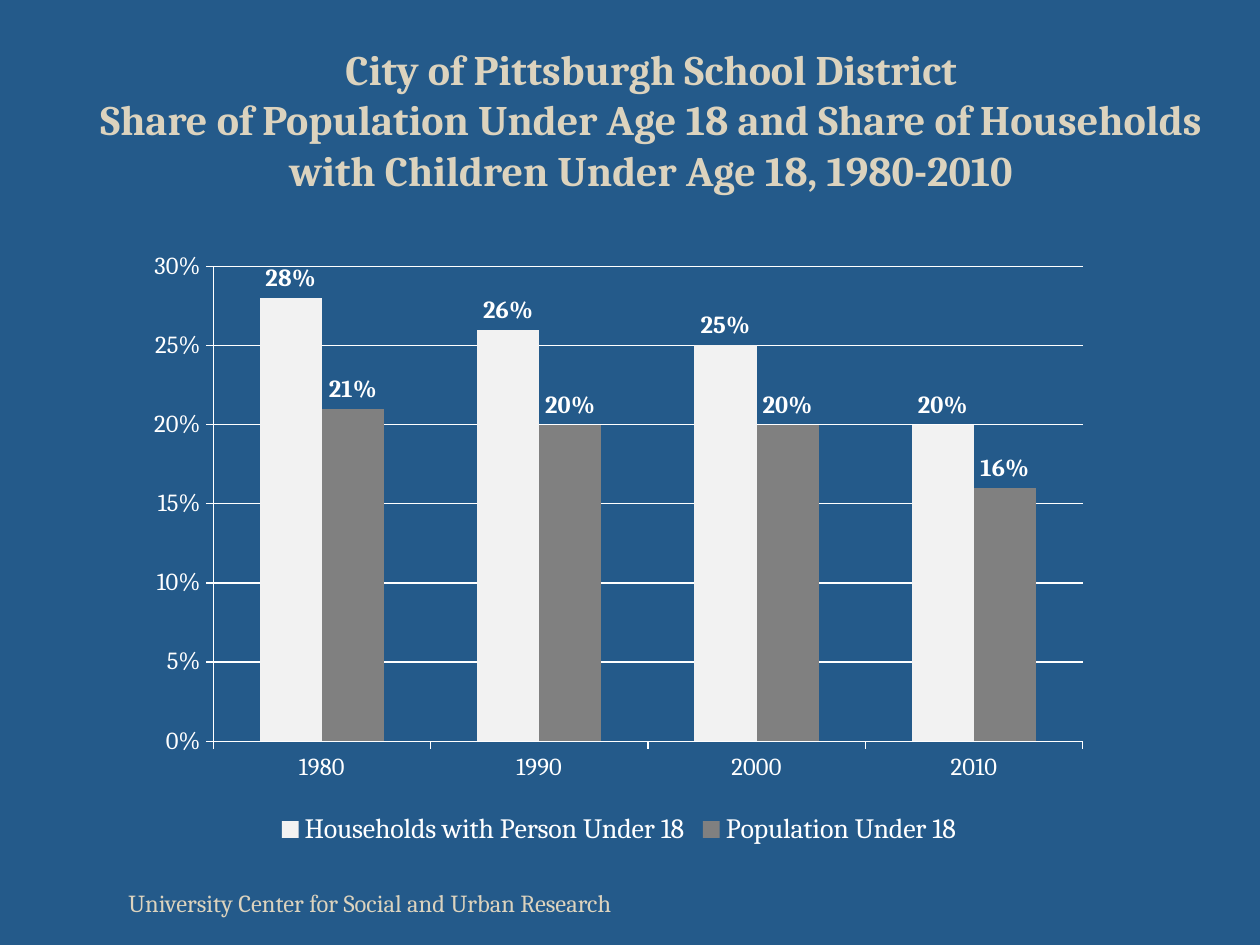
from lxml import etree
from pptx import Presentation
from pptx.chart.data import CategoryChartData
from pptx.dml.color import RGBColor
from pptx.enum.chart import XL_CHART_TYPE, XL_LABEL_POSITION, XL_LEGEND_POSITION, XL_TICK_MARK
from pptx.enum.text import MSO_ANCHOR, PP_ALIGN
from pptx.oxml.ns import qn
from pptx.util import Emu, Pt

COLUMNS = XL_CHART_TYPE.COLUMN_CLUSTERED
OUTSIDE_END = XL_LABEL_POSITION.OUTSIDE_END
BOTTOM = XL_LEGEND_POSITION.BOTTOM
TICK_OUT = XL_TICK_MARK.OUTSIDE
MIDDLE = MSO_ANCHOR.MIDDLE
CENTER = PP_ALIGN.CENTER

FONT = "Cambria"
COLORS = {
    "background": "245A8A",
    "text": "DCD3BE",
    "chart": "FFFFFF",
    "households": "F2F2F2",
    "population": "808080",
}
PX = 914400 // 126


def px(*lengths):
    return [Emu(n * PX) for n in lengths]


def set_font(font, size, color, bold=False):
    font.name, font.size, font.bold = FONT, Pt(size), bold
    font.color.rgb = RGBColor.from_string(COLORS[color])


prs = Presentation()
prs.slide_width, prs.slide_height = px(1260, 945)
s = prs.slides.add_slide(prs.slide_layouts[5])
s.background.fill.solid()
s.background.fill.fore_color.rgb = RGBColor.from_string(COLORS["background"])

# Title
title = s.shapes.title
title.left, title.top, title.width, title.height = px(84, 53, 1134, 84)
tf = title.text_frame
tf.word_wrap = True
tf.vertical_anchor = MIDDLE
tf.margin_top, tf.margin_bottom = px(54, 6)
tf.text = (
    "City of Pittsburgh School District\n"
    "Share of Population Under Age 18 and Share of Households "
    "with Children Under Age 18, 1980-2010"
)
for p in tf.paragraphs:
    p.alignment = CENTER
    p.space_before = Pt(0)
    set_font(p.font, 24, "text", bold=True)

# Chart data
data = CategoryChartData(number_format="0%")
data.categories = ["1980", "1990", "2000", "2010"]
data.add_series("Households with Person Under 18", [0.28, 0.26, 0.25, 0.2])
data.add_series("Population Under 18", [0.21, 0.2, 0.2, 0.16])
chart = s.shapes.add_chart(COLUMNS, *px(136, 242, 966, 609), data).chart
chart.has_title = False
set_font(chart.font, 10, "chart")

# Columns and their labels
plot = chart.plots[0]
plot.gap_width = 150
plot.overlap = 0
plot.vary_by_categories = False
for series, color in zip(plot.series, ["households", "population"]):
    series.format.fill.solid()
    series.format.fill.fore_color.rgb = RGBColor.from_string(COLORS[color])
    labels = series.data_labels
    labels.show_value = True
    labels.number_format = "0%"
    labels.number_format_is_linked = False
    labels.position = OUTSIDE_END
    set_font(labels.font, 14, "chart", bold=True)

# Axes and gridlines
value_axis = chart.value_axis
value_axis.minimum_scale, value_axis.maximum_scale = 0, 0.3
value_axis.major_unit = 0.05
value_axis.has_major_gridlines = True
value_axis.tick_labels.number_format = "0%"
value_axis.tick_labels.number_format_is_linked = False
for axis in (chart.category_axis, value_axis):
    axis.major_tick_mark = TICK_OUT
    set_font(axis.tick_labels.font, 14, "chart")
for part in (chart.category_axis, value_axis, value_axis.major_gridlines):
    part.format.line.width = Pt(0.75)
    part.format.line.color.rgb = RGBColor.from_string(COLORS["chart"])

# Legend
chart.has_legend = True
chart.legend.position = BOTTOM
chart.legend.include_in_layout = False
set_font(chart.legend.font, 16, "chart")

# Plot area position, as fractions of the chart
plot_area = plot._element.getparent()
for old in plot_area.findall(qn("c:layout")):
    plot_area.remove(old)
layout = etree.Element(qn("c:layout"))
manual = etree.SubElement(layout, qn("c:manualLayout"))
for tag, value in [("layoutTarget", "inner"), ("xMode", "edge"), ("yMode", "edge"),
                   ("x", 0.08), ("y", 0.04), ("w", 0.9), ("h", 0.78)]:
    etree.SubElement(manual, qn("c:" + tag)).set("val", str(value))
plot_area.insert(0, layout)

# Footer
tf = s.shapes.add_textbox(*px(116, 882, 588, 63)).text_frame
tf.word_wrap = True
p = tf.paragraphs[0]
p.text = "University Center for Social and Urban Research"
set_font(p.font, 14, "text")

prs.save("out.pptx")
